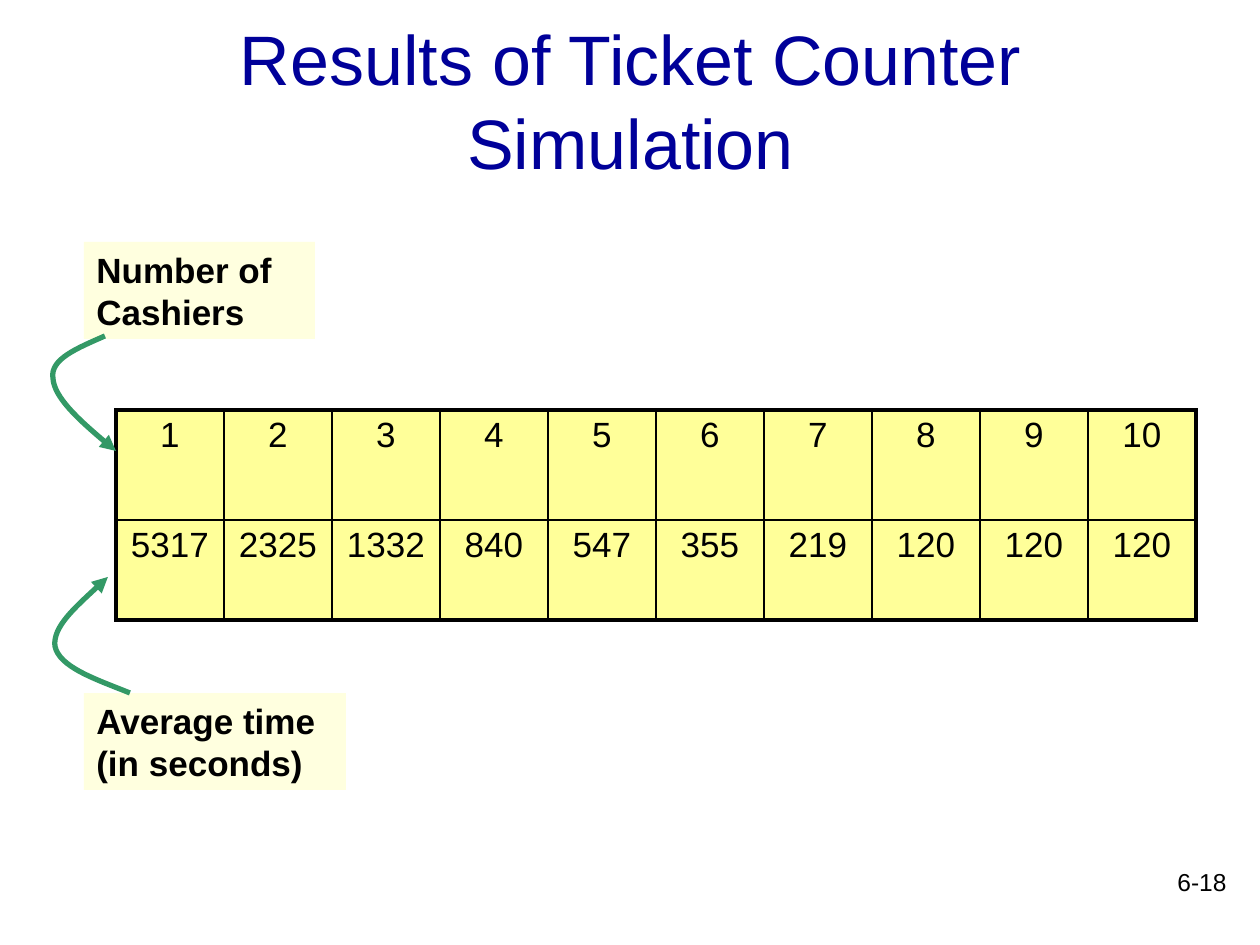
from lxml.etree import SubElement
from pptx import Presentation
from pptx.dml.color import RGBColor
from pptx.enum.shapes import MSO_SHAPE as Shape
from pptx.enum.text import MSO_ANCHOR as Anchor, MSO_AUTO_SIZE as AutoSize, PP_ALIGN as Align
from pptx.oxml.ns import qn
from pptx.util import Emu, Pt

SCALE = 914400 / 126  # EMU in one px
FONT = "Arial"
COLORS = {
    "title": "000099",
    "text": "000000",
    "cell": "FFFF99",
    "label": "FFFFDF",
    "arrow": "339966",
}
CASHIERS = range(1, 11)
AVERAGE_TIMES = [5317, 2325, 1332, 840, 547, 355, 219, 120, 120, 120]
THIN, THICK = Pt(1), Pt(2.25)


def px(n):
    return Emu(round(n * SCALE))


def box(*lengths):
    return [px(n) for n in lengths]


def color(name):
    return RGBColor.from_string(COLORS[name])


def write(tf, text, size, align=Align.LEFT, name="text", bold=False):
    tf.text = text
    p = tf.paragraphs[0]
    p.alignment = align
    font = p.runs[0].font
    font.name, font.size, font.bold = FONT, Pt(size), bold
    font.color.rgb = color(name)


def add_title(slide, text):
    sp = slide.shapes.title
    sp.left, sp.top, sp.width, sp.height = box(95, 21, 1071, 158)
    tf = sp.text_frame
    tf.auto_size = AutoSize.NONE
    tf.vertical_anchor = Anchor.MIDDLE
    write(tf, text, 40, Align.CENTER, "title")


def add_page_number(slide, text):
    tf = slide.shapes.add_textbox(*box(977, 861, 262, 63)).text_frame
    tf.word_wrap = True
    write(tf, text, 14, Align.RIGHT)


def add_label(slide, text, top, width):
    sp = slide.shapes.add_shape(Shape.RECTANGLE, *box(84, top, width, 97))
    sp.shadow.inherit = False
    sp.fill.solid()
    sp.fill.fore_color.rgb = color("label")
    sp.line.fill.background()
    tf = sp.text_frame
    tf.word_wrap = True
    tf.auto_size = AutoSize.SHAPE_TO_FIT_TEXT
    tf.vertical_anchor = Anchor.TOP
    write(tf, text, 20, bold=True)


def set_border(cell, side, width):
    ln = SubElement(cell._tc.get_or_add_tcPr(), qn(f"a:ln{side}"), w=str(width))
    fill = SubElement(ln, qn("a:solidFill"))
    SubElement(fill, qn("a:srgbClr"), val=COLORS["text"])


def add_results_table(slide, rows, col_width, row_heights):
    n_rows, n_cols = len(rows), len(rows[0])
    size = col_width * n_cols, sum(row_heights)
    table = slide.shapes.add_table(n_rows, n_cols, *box(116, 410, *size)).table
    table.first_row = table.horz_banding = False
    for col in table.columns:
        col.width = px(col_width)
    for i, values in enumerate(rows):
        table.rows[i].height = px(row_heights[i])
        for j, value in enumerate(values):
            cell = table.cell(i, j)
            write(cell.text_frame, str(value), 20, Align.CENTER)
            # Thick outer frame, thin inner grid
            outer = {"L": j == 0, "R": j == n_cols - 1, "T": i == 0, "B": i == n_rows - 1}
            for side, is_outer in outer.items():
                set_border(cell, side, THICK if is_outer else THIN)
            cell.fill.solid()
            cell.fill.fore_color.rgb = color("cell")


def add_curved_arrow(slide, points):
    """Start point followed by three points for each Bezier segment."""
    builder = slide.shapes.build_freeform(*points[0], scale=SCALE)
    builder.add_line_segments(points[1:], close=False)
    sp = builder.convert_to_shape()
    # Join every three line points into one cubic curve
    outline = sp._element.find(".//" + qn("a:path"))
    lines = outline.findall(qn("a:lnTo"))
    for k in range(0, len(lines), 3):
        curve = SubElement(outline, qn("a:cubicBezTo"))
        for line in lines[k:k + 3]:
            curve.append(line[0])
            outline.remove(line)
    sp.shadow.inherit = False
    sp.fill.background()
    sp.line.color.rgb = color("arrow")
    sp.line.width = Pt(3)
    SubElement(sp.line._get_or_add_ln(), qn("a:tailEnd"), type="triangle")


def main():
    prs = Presentation()
    prs.slide_width, prs.slide_height = box(1260, 945)
    slide = prs.slides.add_slide(prs.slide_layouts[5])

    # Title and page number
    add_page_number(slide, "6-18")
    add_title(slide, "Results of Ticket Counter Simulation")

    # Simulation results
    add_results_table(slide, [CASHIERS, AVERAGE_TIMES], 108, [110, 100])

    # Row labels and their arrows
    add_label(slide, "Number of Cashiers", 242, 231)
    add_label(slide, "Average time (in seconds)", 693, 262)
    add_curved_arrow(slide, [(105, 336), (78, 348), (50, 359), (53, 378),
                             (54, 397), (84, 425), (116, 451)])
    add_curved_arrow(slide, [(130, 693), (95, 679), (59, 667), (55, 646),
                             (53, 627), (81, 602), (108, 577)])

    prs.save("out.pptx")


if __name__ == "__main__":
    main()
